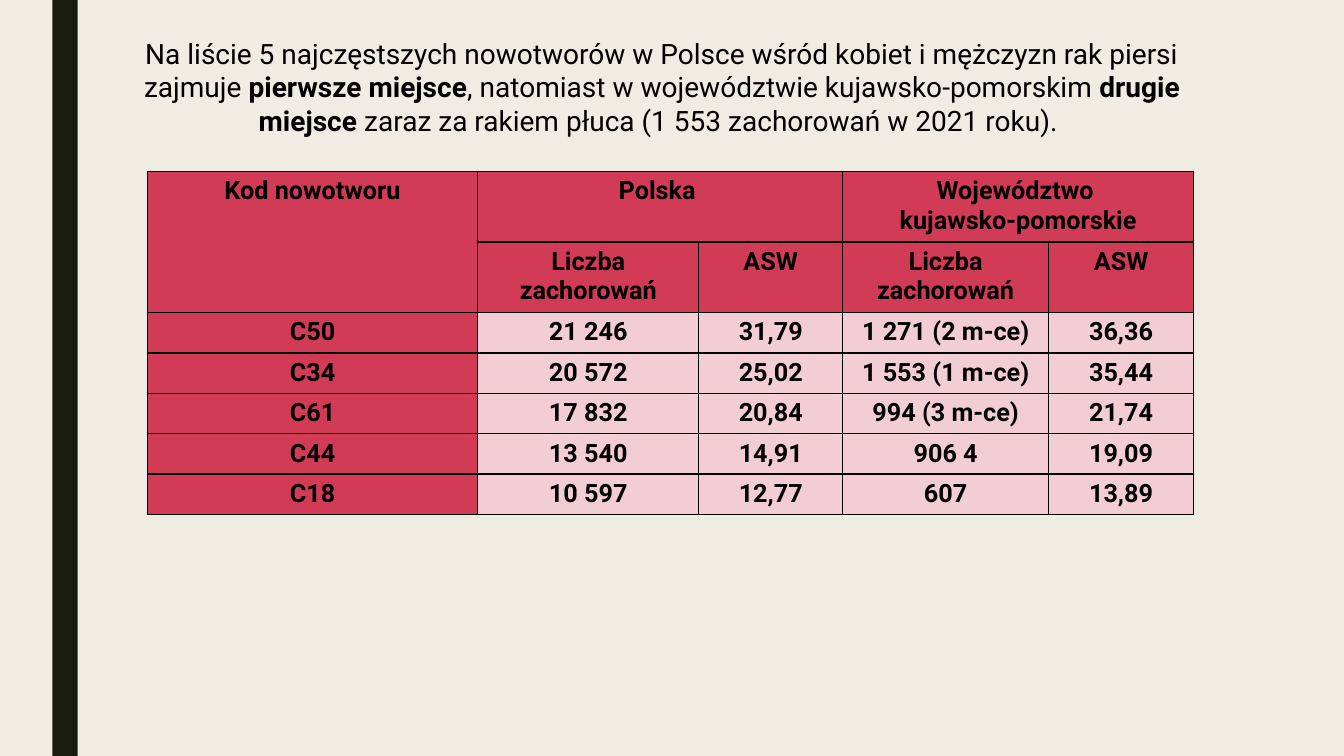
from lxml import etree
from pptx import Presentation
from pptx.dml.color import RGBColor
from pptx.enum.shapes import MSO_SHAPE
from pptx.enum.text import PP_ALIGN
from pptx.oxml.ns import qn
from pptx.util import Inches, Pt

RECTANGLE = MSO_SHAPE.RECTANGLE
CENTER = PP_ALIGN.CENTER
FONT = "Roboto"
BLACK = RGBColor(0x00, 0x00, 0x00)
CREAM = RGBColor(0xEF, 0xED, 0xE3)
DARK = RGBColor(0x19, 0x1B, 0x0E)
RED = RGBColor(0xD1, 0x3B, 0x56)
PINK = RGBColor(0xF3, 0xCD, 0xD4)

WIDTH, HEIGHT = 13.33, 7.5
STRIPE_BOX = (0.52, 0, 0.25, HEIGHT)
INTRO_BOX = (1.29, 0.31, 10.55, 2.02)
TABLE_BOX = (1.46, 1.7, 10.38, 3.4)
COLUMN_WIDTHS = (3.28, 2.19, 1.43, 2.04, 1.44)
HEADER_ROWS = 2
HEADER_HEIGHT = 0.7

INTRO = (
    ("Na liście 5 najczęstszych nowotworów w Polsce wśród kobiet i mężczyzn rak piersi zajmuje ", False),
    ("pierwsze miejsce", True),
    (", natomiast w województwie kujawsko-pomorskim ", False),
    ("drugie miejsce ", True),
    ("zaraz za rakiem płuca (1 553 zachorowań w 2021 roku). ", False),
)
ROWS = (
    ("Kod nowotworu", "Polska ", "", "Województwo \vkujawsko-pomorskie", ""),
    ("", "Liczba zachorowań", "ASW", "Liczba zachorowań", "ASW"),
    ("C50", "21 246", "31,79", "1 271 (2 m-ce)", "36,36"),
    ("C34", "20 572", "25,02", "1 553 (1 m-ce)", "35,44"),
    ("C61", "17 832", "20,84", "994 (3 m-ce)", "21,74"),
    ("C44", "13 540", "14,91", "906 4", "19,09"),
    ("C18", "10 597", "12,77", "607", "13,89"),
)
MERGES = (((0, 0), (1, 0)), ((0, 1), (0, 2)), ((0, 3), (0, 4)))


def style_paragraph(para, size):
    """Centre a paragraph and set its font, size and colour."""
    para.alignment = CENTER
    para.font.name = FONT
    para.font.size = Pt(size)
    para.font.color.rgb = BLACK


def add_stripe(page, box):
    """Draw the dark vertical stripe in the box."""
    stripe = page.shapes.add_shape(RECTANGLE, *map(Inches, box))
    stripe.shadow.inherit = False
    stripe.fill.solid()
    stripe.fill.fore_color.rgb = DARK
    stripe.line.fill.background()


def add_intro(page, box):
    """Write the introductory sentence in the box."""
    frame = page.shapes.add_textbox(*map(Inches, box)).text_frame
    frame.word_wrap = True
    para = frame.paragraphs[0]
    style_paragraph(para, 20)
    for text, bold in INTRO:
        span = para.add_run()
        span.text = text
        span.font.bold = bold


def add_borders(cell):
    """Give a cell thin black lines on all four sides."""
    properties = cell._tc.get_or_add_tcPr()
    for side in ("lnL", "lnR", "lnT", "lnB"):
        line = etree.SubElement(properties, qn(f"a:{side}"), w=str(Pt(1)))
        fill = etree.SubElement(line, qn("a:solidFill"))
        etree.SubElement(fill, qn("a:srgbClr"), val=str(BLACK))


def add_cancer_table(page, box):
    """Build the table of cases, with its two header rows, in the box."""
    table = page.shapes.add_table(len(ROWS), len(COLUMN_WIDTHS), *map(Inches, box)).table
    table.first_row = table.horz_banding = False
    for column, width in zip(table.columns, COLUMN_WIDTHS):
        column.width = Inches(width)
    body_height = (box[3] - HEADER_ROWS * HEADER_HEIGHT) / (len(ROWS) - HEADER_ROWS)
    for r, texts in enumerate(ROWS):
        table.rows[r].height = Inches(HEADER_HEIGHT if r < HEADER_ROWS else body_height)
        for c, text in enumerate(texts):
            cell = table.cell(r, c)
            cell.text = text
            add_borders(cell)
            cell.fill.solid()
            cell.fill.fore_color.rgb = RED if r < HEADER_ROWS or c == 0 else PINK
            para = cell.text_frame.paragraphs[0]
            style_paragraph(para, 18)
            para.font.bold = True
    for first, last in MERGES:
        table.cell(*first).merge(table.cell(*last))


def main():
    """Build and save the deck."""
    deck = Presentation()
    deck.slide_width, deck.slide_height = Inches(WIDTH), Inches(HEIGHT)
    page = deck.slides.add_slide(deck.slide_layouts[6])
    page.background.fill.solid()
    page.background.fill.fore_color.rgb = CREAM
    add_stripe(page, STRIPE_BOX)
    add_intro(page, INTRO_BOX)
    add_cancer_table(page, TABLE_BOX)
    deck.save("out.pptx")


if __name__ == "__main__":
    main()
